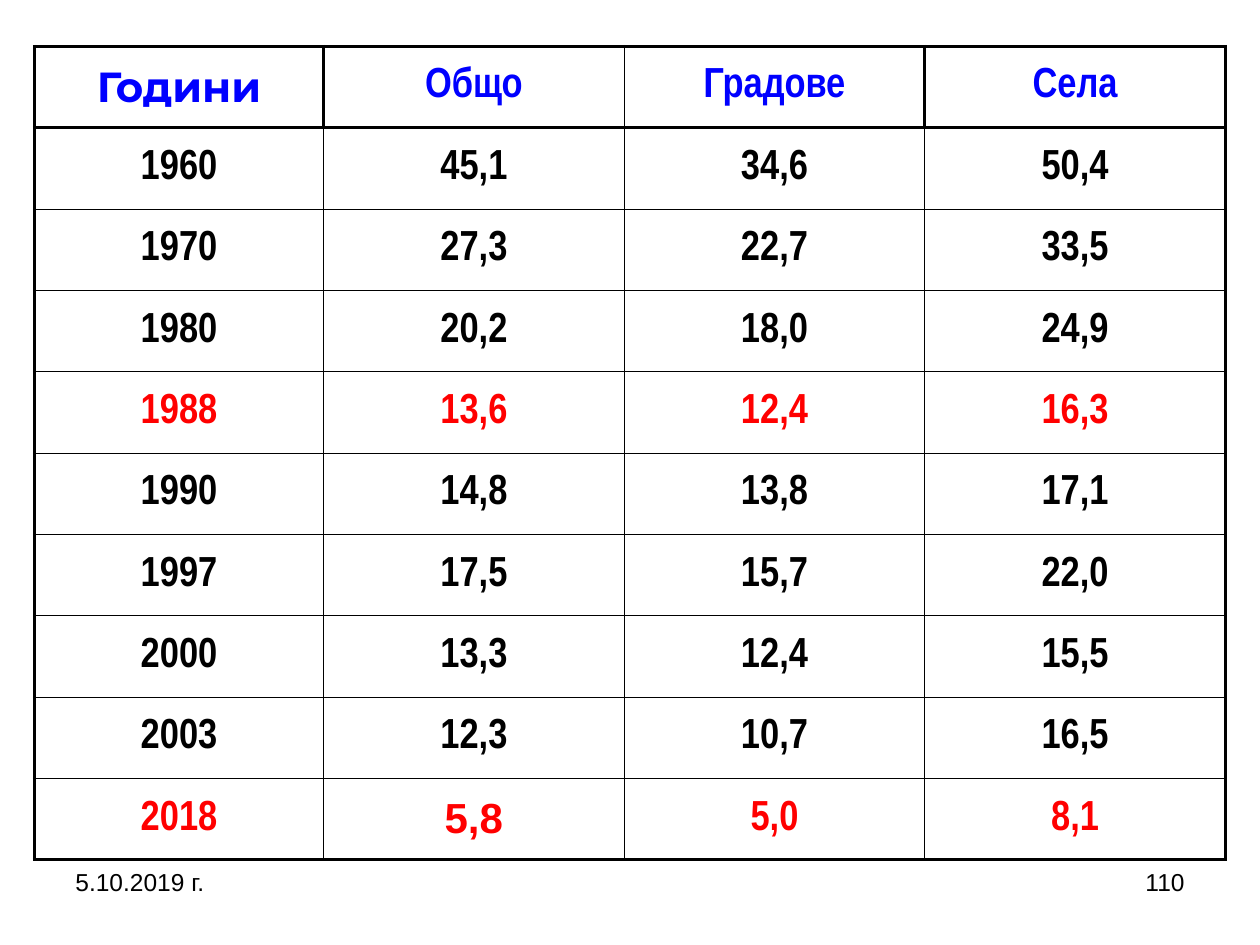
import dataclasses

import lxml.etree
import pptx
import pptx.dml.color
import pptx.enum.text
import pptx.oxml.ns
import pptx.util

Pt = pptx.util.Pt
Align = pptx.enum.text.PP_ALIGN
Anchor = pptx.enum.text.MSO_ANCHOR

ROWS = [
    ["Години", "Общо", "Градове", "Села"],
    ["1960", "45,1", "34,6", "50,4"],
    ["1970", "27,3", "22,7", "33,5"],
    ["1980", "20,2", "18,0", "24,9"],
    ["1988", "13,6", "12,4", "16,3"],
    ["1990", "14,8", "13,8", "17,1"],
    ["1997", "17,5", "15,7", "22,0"],
    ["2000", "13,3", "12,4", "15,5"],
    ["2003", "12,3", "10,7", "16,5"],
    ["2018", "5,8", "5,0", "8,1"],
]
HIGHLIGHTED_YEARS = {"1988", "2018"}
COLUMN_WIDTHS = [165.2, 171.8, 171.8, 171.8]
ROW_HEIGHT = 46.5


@dataclasses.dataclass(frozen=True)
class Theme:
    paper: str = "FFFFFF"
    ink: str = "000000"
    heading: str = "0000FF"
    highlight: str = "FF0000"
    body_font: str = "Arial"
    table_font: str = "Arial Narrow"
    heading_font: str = "Montserrat"
    table_size: int = 24
    footer_size: int = 14
    thin: float = 0.75
    thick: float = 2


class SlideBuilder:
    def __init__(self, slide, theme):
        self.slide = slide
        self.theme = theme

    def background(self):
        fill = self.slide.background.fill
        fill.solid()
        fill.fore_color.rgb = pptx.dml.color.RGBColor.from_string(self.theme.paper)

    def add_text(self, frame, text, align, color, **font_format):
        paragraph = frame.paragraphs[0]
        paragraph.alignment = align
        run = paragraph.add_run()
        run.text = text
        for name, value in font_format.items():
            setattr(run.font, name, value)
        run.font.color.rgb = pptx.dml.color.RGBColor.from_string(color)

    def footer(self, text, left, align):
        box = self.slide.shapes.add_textbox(Pt(left), Pt(492), Pt(168), Pt(37.5))
        box.text_frame.word_wrap = True
        self.add_text(box.text_frame, text, align, self.theme.ink,
                      name=self.theme.body_font, size=Pt(self.theme.footer_size))

    def table(self, rows, left, top):
        shape = self.slide.shapes.add_table(
            len(rows), len(rows[0]), Pt(left), Pt(top),
            Pt(sum(COLUMN_WIDTHS)), Pt(ROW_HEIGHT * len(rows)))
        table = shape.table
        table.first_row = table.horz_banding = False
        for column, width in zip(table.columns, COLUMN_WIDTHS):
            column.width = Pt(width)
        for row in table.rows:
            row.height = Pt(ROW_HEIGHT)
        for row_index, values in enumerate(rows):
            for column_index, text in enumerate(values):
                cell = table.cell(row_index, column_index)
                self.borders(cell, row_index, column_index, len(rows))
                self.cell(cell, text, self.row_color(row_index, values[0]))

    def row_color(self, row_index, year):
        if row_index == 0:
            return self.theme.heading
        return self.theme.highlight if year in HIGHLIGHTED_YEARS else self.theme.ink

    def cell(self, cell, text, color):
        fonts = {"Години": self.theme.heading_font, "5,8": self.theme.body_font}
        cell.vertical_anchor = Anchor.MIDDLE
        cell.fill.solid()
        cell.fill.fore_color.rgb = pptx.dml.color.RGBColor.from_string(self.theme.paper)
        self.add_text(cell.text_frame, text, Align.CENTER, color, bold=True,
                      name=fonts.get(text, self.theme.table_font),
                      size=Pt(self.theme.table_size))

    def borders(self, cell, row, column, row_count):
        """Thick frame and header rule; thick header dividers except the middle one."""
        thick_rules = {0, 1, row_count}
        thick_dividers = {0, 1, 3, 4} if row == 0 else {0, 4}
        sides = {
            "lnL": column in thick_dividers,
            "lnR": column + 1 in thick_dividers,
            "lnT": row in thick_rules,
            "lnB": row + 1 in thick_rules,
        }
        qn = pptx.oxml.ns.qn
        properties = cell._tc.get_or_add_tcPr()
        for tag, is_thick in sides.items():
            width = self.theme.thick if is_thick else self.theme.thin
            line = lxml.etree.SubElement(properties, qn(f"a:{tag}"), w=str(Pt(width)))
            fill = lxml.etree.SubElement(line, qn("a:solidFill"))
            lxml.etree.SubElement(fill, qn("a:srgbClr"), val=self.theme.ink)


def main():
    presentation = pptx.Presentation()
    presentation.slide_width, presentation.slide_height = Pt(720), Pt(540)
    slide = presentation.slides.add_slide(presentation.slide_layouts[6])
    builder = SlideBuilder(slide, Theme())
    builder.background()
    builder.footer("110", 516, Align.RIGHT)
    builder.table(ROWS, 19.7, 26.5)
    builder.footer("5.10.2019 г.", 36, Align.LEFT)
    presentation.save("out.pptx")


if __name__ == "__main__":
    main()
